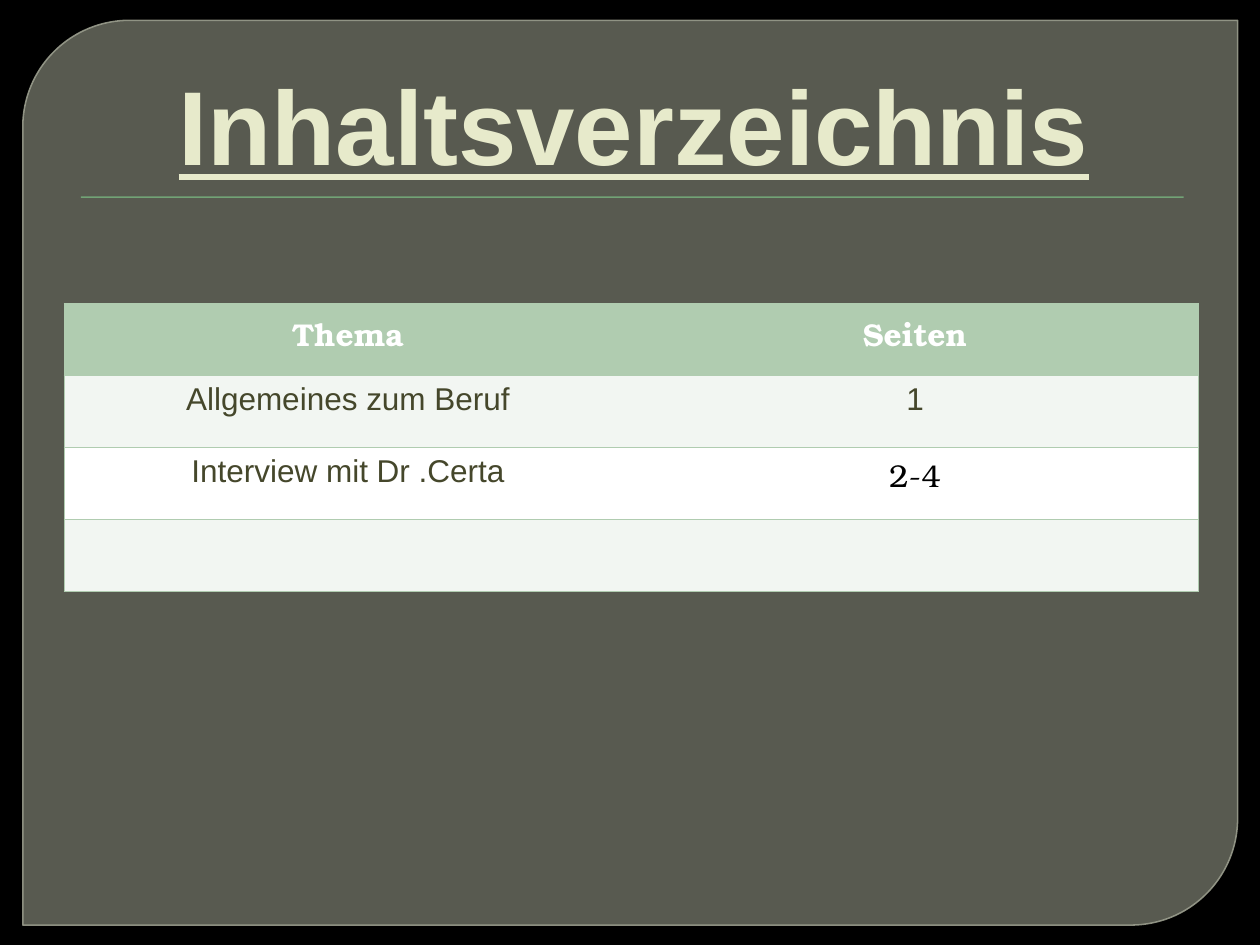
from lxml.etree import SubElement
from pptx import Presentation
from pptx.dml.color import RGBColor
from pptx.enum.shapes import MSO_SHAPE
from pptx.enum.text import MSO_ANCHOR, PP_ALIGN
from pptx.oxml.ns import qn
from pptx.util import Cm, Pt

COLORS = {
    "background": "000000", "panel": "888B7B", "panel_line": "9DA090",
    "rule": "72A376", "title": "E7EACB", "header": "B0CCB0",
    "band": "F2F6F2", "white": "FFFFFF", "body": "45472B", "black": "000000",
}
SANS, SERIF = "Arial", "TeX Gyre Bonum"
NO_STYLE = "{2D5ABB26-0587-4C30-8999-92F81FD0307C}"
ROWS = [("Thema", "Seiten"), ("Allgemeines zum Beruf", "1"),
        ("Interview mit Dr .Certa", "2-4"), ("", "")]


def color(name):
    """Return the named colour."""
    return RGBColor.from_string(COLORS[name])


def fill_solid(fill, name):
    """Fill with one named colour."""
    fill.solid()
    fill.fore_color.rgb = color(name)


def set_alpha(color_parent, percent):
    """Make the colour inside a solid fill translucent."""
    rgb = next(color_parent.iter(qn("a:srgbClr")))
    SubElement(rgb, qn("a:alpha"), val=str(percent * 1000))


def format_text(paragraph, font_name, size, color_name, bold=False):
    """Centre a paragraph and format its runs."""
    paragraph.alignment = PP_ALIGN.CENTER
    for run in paragraph.runs:
        run.font.name = font_name
        run.font.size = Pt(size)
        run.font.bold = bold
        run.font.color.rgb = color(color_name)


def add_panel(slide, left, top, width, height):
    """Add the translucent panel with two rounded corners."""
    panel = slide.shapes.add_shape(
        MSO_SHAPE.ROUND_2_DIAG_RECTANGLE, Cm(left), Cm(top), Cm(width), Cm(height))
    panel.adjustments[0] = 0.118
    panel.adjustments[1] = 0
    panel.shadow.inherit = False
    fill_solid(panel.fill, "panel")
    set_alpha(panel._element.spPr.find(qn("a:solidFill")), 65)
    panel.line.color.rgb = color("panel_line")
    panel.line.width = Pt(0.87)
    set_alpha(panel._element.spPr.find(qn("a:ln")), 88)


def add_title(slide, left, top, width, height):
    """Add the underlined title and the thin rule below it."""
    rule = slide.shapes.add_shape(
        MSO_SHAPE.RECTANGLE, Cm(left + 0.36), Cm(top + height + 0.07),
        Cm(width - 0.63), Cm(0.03))
    rule.shadow.inherit = False
    fill_solid(rule.fill, "rule")
    rule.line.fill.background()
    title = slide.shapes.add_textbox(Cm(left), Cm(top), Cm(width), Cm(height))
    text_frame = title.text_frame
    text_frame.word_wrap = True
    text_frame.vertical_anchor = MSO_ANCHOR.BOTTOM
    text_frame.text = "Inhaltsverzeichnis"
    paragraph = text_frame.paragraphs[0]
    format_text(paragraph, SANS, 60, "title", bold=True)
    paragraph.runs[0].font.underline = True
    paragraph._p.get_or_add_pPr().set("marL", str(Cm(0.15)))


def add_borders(cell, sides):
    """Draw thin lines on the given sides of a cell."""
    properties = cell._tc.get_or_add_tcPr()
    for side in sides:
        line = SubElement(properties, qn(f"a:ln{side}"), w=str(Pt(1)))
        solid = SubElement(line, qn("a:solidFill"))
        SubElement(solid, qn("a:srgbClr"), val=COLORS["header"])


def add_contents_table(slide, left, top, width, height):
    """Add the table of topics and pages."""
    frame = slide.shapes.add_table(
        len(ROWS), len(ROWS[0]), Cm(left), Cm(top), Cm(width), Cm(height))
    table = frame.table
    table._tbl.tblPr.find(qn("a:tableStyleId")).text = NO_STYLE
    for row_index, row in enumerate(ROWS):
        header = row_index == 0
        fill_name = "header" if header else ("white", "band")[row_index % 2]
        for column_index, text in enumerate(row):
            cell = table.cell(row_index, column_index)
            add_borders(cell, ("LTB", "RTB")[column_index])
            fill_solid(cell.fill, fill_name)
            cell.text_frame.text = text
            style = (SANS, 18, "body")
            if header:
                style = (SERIF, 18, "white", True)
            elif text == "2-4":
                style = (SERIF, 18, "black")
            format_text(cell.text_frame.paragraphs[0], *style)


def main():
    """Build and save the contents slide."""
    presentation = Presentation()
    presentation.slide_width = Cm(25.4)
    presentation.slide_height = Cm(19.05)
    slide = presentation.slides.add_slide(presentation.slide_layouts[6])
    fill_solid(slide.background.fill, "background")
    add_panel(slide, 0.46, 0.41, 24.49, 18.24)
    add_title(slide, 1.27, 0.71, 22.86, 3.18)
    add_contents_table(slide, 1.3, 6.12, 22.86, 5.8)
    presentation.save("out.pptx")


if __name__ == "__main__":
    main()
